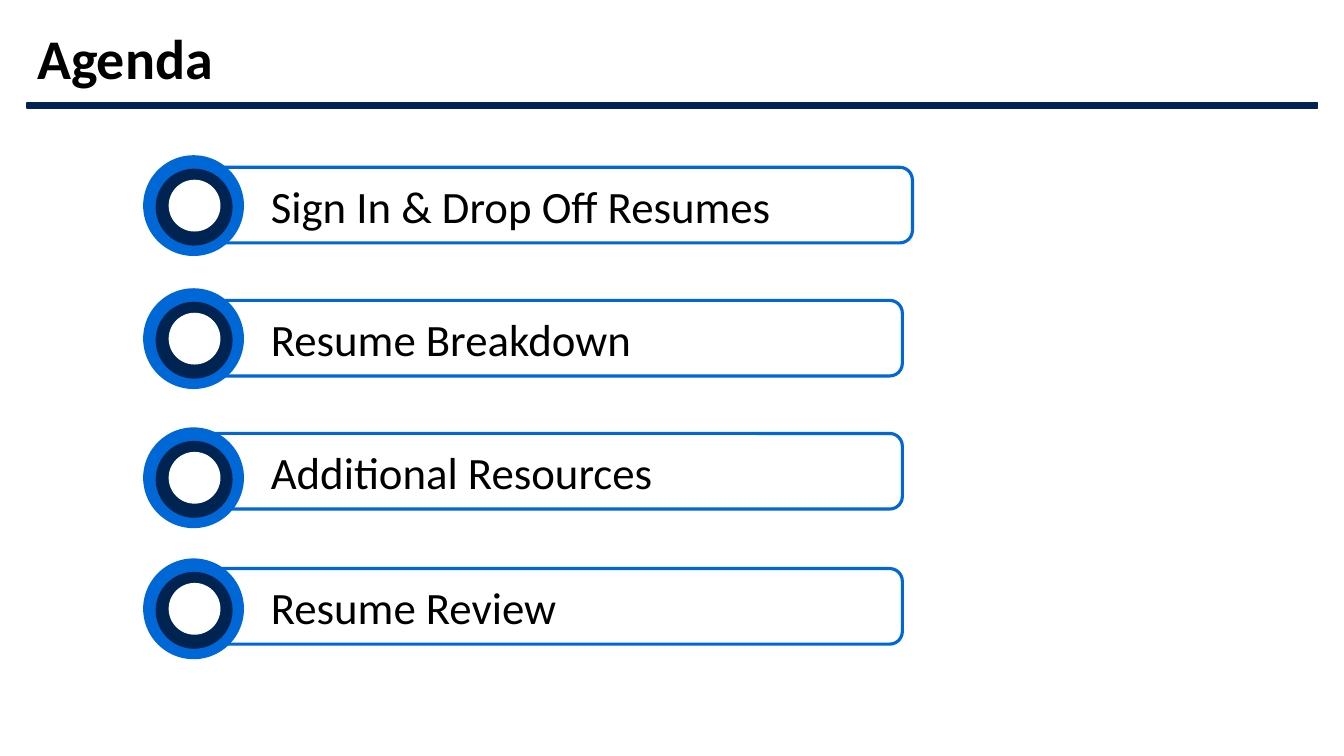
"""Build the agenda slide: a ruled title above four bulleted bars."""
from pptx import Presentation
from pptx.dml.color import RGBColor
from pptx.enum.shapes import MSO_SHAPE as SHAPE
from pptx.enum.text import MSO_ANCHOR as ANCHOR, PP_ALIGN as ALIGN
from pptx.util import Pt

TITLE = "Agenda"
AGENDA = [
    {"topic": "Sign In & Drop Off Resumes", "bar_top": 166, "bar_width": 720, "ring_top": 154},
    {"topic": "Resume Breakdown", "bar_top": 298, "bar_width": 710, "ring_top": 286},
    {"topic": "Additional Resources", "bar_top": 430, "bar_width": 710, "ring_top": 424},
    {"topic": "Resume Review", "bar_top": 564, "bar_width": 710, "ring_top": 554},
]
COLORS = {"navy": "002452", "blue": "0068D6", "white": "FFFFFF", "black": "000000"}
RINGS = [
    (0, 0, 100, "blue", None),
    (13, 14, 75, "navy", "navy"),
    (26, 25, 50, "white", "white"),
]
PX = 9144
BAR_LEFT, BAR_HEIGHT, RING_LEFT = 185, 75, 142
MARGIN, CONTENT_WIDTH = 27, 1280


def color(name):
    return RGBColor.from_string(COLORS[name])


def write(frame, text, size, bold=False, inset=10, spacing=1.0):
    settings = {"word_wrap": True, "vertical_anchor": ANCHOR.MIDDLE,
                "margin_left": inset * PX, "margin_right": 10 * PX,
                "margin_top": 5 * PX, "margin_bottom": 5 * PX}
    for key, value in settings.items():
        setattr(frame, key, value)
    line = frame.paragraphs[0]
    line.text = text
    line.alignment = ALIGN.LEFT
    line.line_spacing = spacing
    for key, value in {"name": "Calibri", "size": Pt(size), "bold": bold}.items():
        setattr(line.font, key, value)
    line.font.color.rgb = color("black")


def draw(slide, kind, box, fill=None, outline=None, weight=1):
    shape = slide.shapes.add_shape(kind, *(n * PX for n in box))
    shape.shadow.inherit = False
    if fill:
        shape.fill.solid()
        shape.fill.fore_color.rgb = color(fill)
    else:
        shape.fill.background()
    if outline:
        shape.line.color.rgb = color(outline)
        shape.line.width = Pt(weight)
    else:
        shape.line.fill.background()
    return shape


def main():
    deck = Presentation()
    deck.slide_width, deck.slide_height = 1333 * PX, 750 * PX
    slide = deck.slides.add_slide(deck.slide_layouts[6])

    draw(slide, SHAPE.RECTANGLE, (MARGIN, 102, CONTENT_WIDTH, 5), "navy", "navy")
    title_box = (MARGIN, 19, CONTENT_WIDTH, 83)
    title = slide.shapes.add_textbox(*(n * PX for n in title_box))
    write(title.text_frame, TITLE, 40, bold=True, spacing=0.9)

    for item in AGENDA:
        bar_box = (BAR_LEFT, item["bar_top"], item["bar_width"], BAR_HEIGHT)
        bar = draw(slide, SHAPE.ROUNDED_RECTANGLE, bar_box, outline="blue", weight=2.25)
        write(bar.text_frame, item["topic"], 32, inset=80)
        for dx, dy, size, fill, outline in RINGS:
            ring_box = (RING_LEFT + dx, item["ring_top"] + dy, size, size)
            draw(slide, SHAPE.OVAL, ring_box, fill, outline)

    deck.save("out.pptx")


if __name__ == "__main__":
    main()
